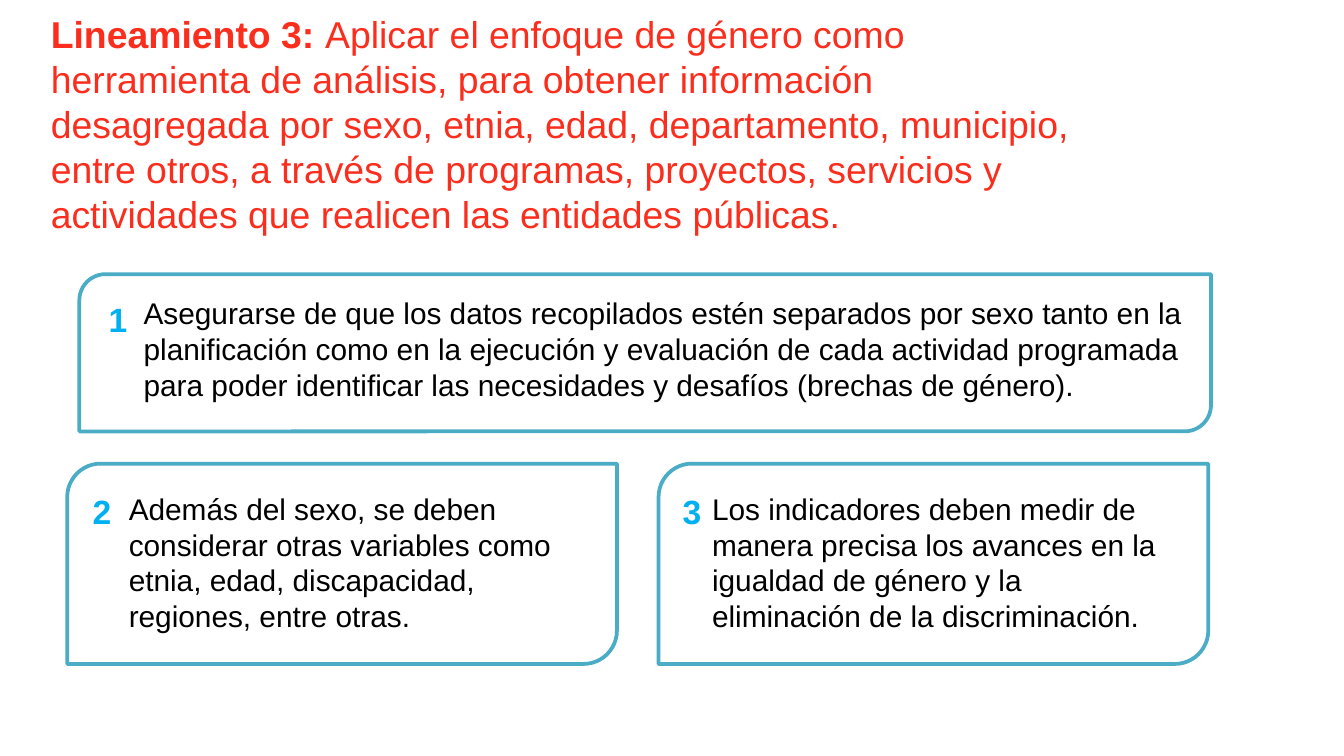
import pptx
import pptx.util
import pptx.dml.color
import pptx.enum.shapes
import pptx.enum.text

Inches = pptx.util.Inches
ANCHOR = pptx.enum.text.MSO_ANCHOR
ALIGN = pptx.enum.text.PP_ALIGN
COLORS = {"white": "FFFFFF", "teal": "4BACC6", "blue": "00B0F0",
          "black": "000000", "red": "FB2D1D"}


def rgb(name):
    return pptx.dml.color.RGBColor.from_string(COLORS[name])


def add_text(s, box, runs, size, color, anchor, align=ALIGN.LEFT, grow=True):
    """Add a one-paragraph text box; runs are (text, bold) pairs."""
    tf = s.shapes.add_textbox(*map(Inches, box)).text_frame
    tf.word_wrap = True
    tf.vertical_anchor = anchor
    if grow:
        tf.auto_size = pptx.enum.text.MSO_AUTO_SIZE.SHAPE_TO_FIT_TEXT
    p = tf.paragraphs[0]
    p.alignment = align
    for text, bold in runs:
        r = p.add_run()
        r.text = text
        r.font.name = "Arial"
        r.font.size = pptx.util.Pt(size)
        r.font.bold = bold
        r.font.color.rgb = rgb(color)


prs = pptx.Presentation()
prs.slide_width = Inches(10)
prs.slide_height = Inches(10 * 9 / 16)  # 16:9
s = prs.slides.add_slide(prs.slide_layouts[6])

# Card frame, number position, text box, text anchor, text
cards = [
    ((0.59, 2.04, 8.42, 1.17), (0.71, 2.17), (0.97, 2.14, 7.95, 0.91), ANCHOR.MIDDLE,
     "Asegurarse de que los datos recopilados estén separados por sexo tanto en la "
     "planificación como en la ejecución y evaluación de cada actividad programada "
     "para poder identificar las necesidades y desafíos (brechas de género)."),
    ((0.5, 3.45, 4.09, 1.49), (0.59, 3.6), (0.86, 3.6, 3.62, 1.18), ANCHOR.TOP,
     "Además del sexo, se deben considerar otras variables como etnia, edad, "
     "discapacidad, regiones, entre otras."),
    ((4.9, 3.45, 4.09, 1.49), (4.98, 3.6), (5.2, 3.6, 3.5, 1.18), ANCHOR.TOP,
     "Los indicadores deben medir de manera precisa los avances en la igualdad de "
     "género y la eliminación de la discriminación."),
]

for number, (frame, number_at, text_box, anchor, text) in enumerate(cards, 1):
    sp = s.shapes.add_shape(pptx.enum.shapes.MSO_SHAPE.ROUND_2_DIAG_RECTANGLE,
                            *map(Inches, frame))
    sp.shadow.inherit = False
    sp.fill.solid()
    sp.fill.fore_color.rgb = rgb("white")
    sp.line.color.rgb = rgb("teal")
    sp.line.width = pptx.util.Pt(2)
    add_text(s, (*number_at, 0.31, 0.4), [(str(number), True)], 18, "blue",
             ANCHOR.BOTTOM, ALIGN.RIGHT)
    add_text(s, text_box, [(text, False)], 16, "black", anchor)

title = [
    ("Lineamiento 3: ", True),
    ("Aplicar el enfoque de género como herramienta de análisis, para obtener "
     "información desagregada por sexo, etnia, edad, departamento, municipio, entre "
     "otros, a través de programas, proyectos, servicios y actividades que realicen "
     "las entidades públicas.", False),
]
add_text(s, (0.28, 0.53, 7.84, 0.78), title, 20, "red", ANCHOR.MIDDLE, grow=False)

prs.save("out.pptx")
